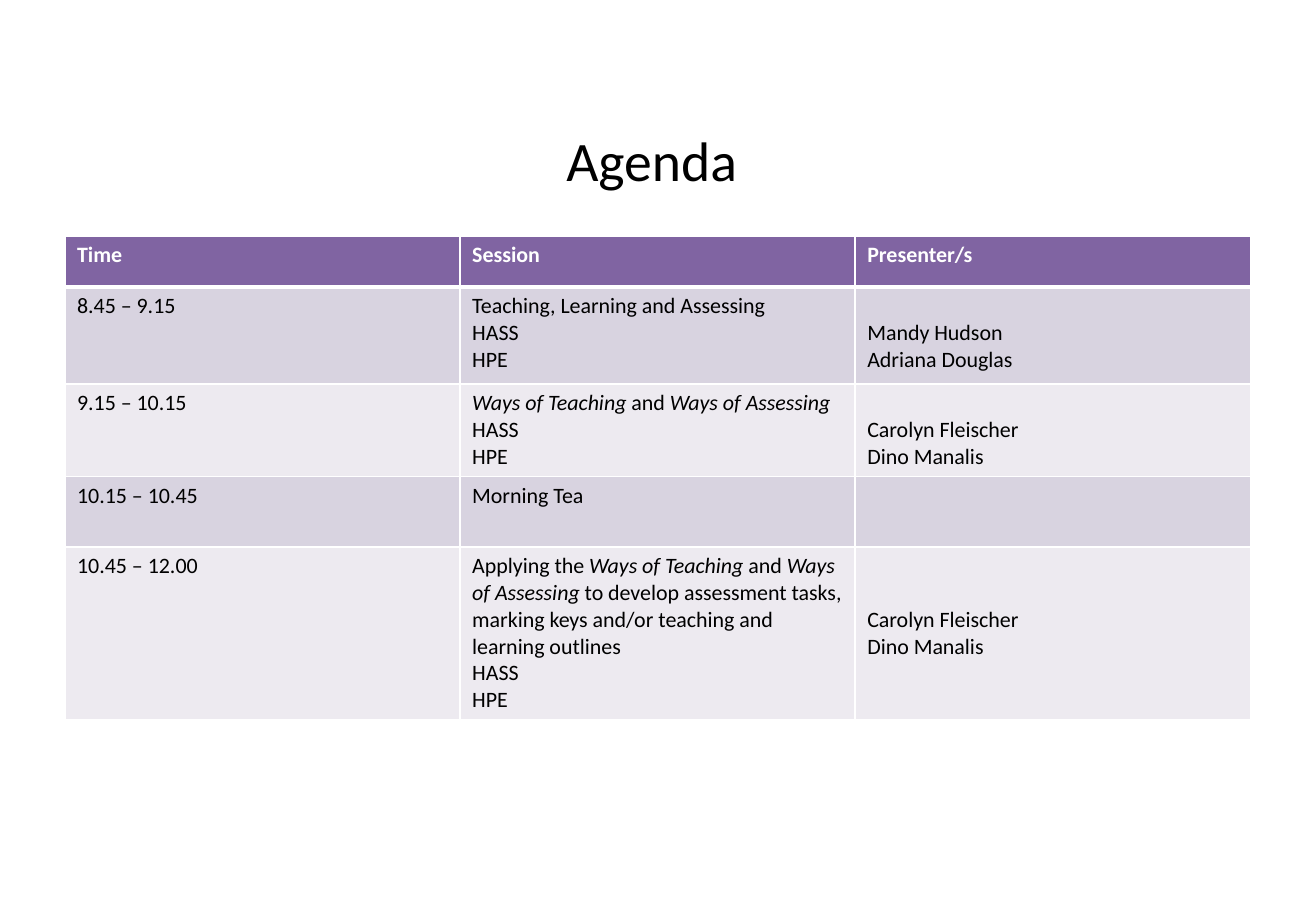
from lxml.etree import SubElement
from pptx import Presentation
from pptx.dml.color import RGBColor
from pptx.enum.text import MSO_ANCHOR, PP_ALIGN
from pptx.oxml.ns import qn
from pptx.util import Pt

WHITE, BLACK, PURPLE = "FFFFFF", "000000", "8064A2"
BANDS = ("D8D3E0", "EDEAF0")
LINE_PITCH = 15.87  # one line of 13 pt text
ROW_HEIGHTS = (30.24, 57.6, 54.81, 41.76, 102.42)

# Asterisks enclose italic words
HEADINGS = ("Time", "Session", "Presenter/s")
SESSIONS = (
    ("8.45 – 9.15", ("Teaching, Learning and Assessing", "HASS", "HPE"),
     ("Mandy Hudson", "Adriana Douglas"), 1),
    ("9.15 – 10.15", ("*Ways of Teaching *and *Ways of Assessing*", "HASS", "HPE"),
     ("Carolyn Fleischer", "Dino Manalis"), 1),
    ("10.15 – 10.45", ("Morning Tea",), (), 0),
    ("10.45 – 12.00",
     ("Applying the *Ways of Teaching *and *Ways of Assessing *to develop "
      "assessment tasks, marking keys and/or teaching and learning outlines",
      "HASS", "HPE"),
     ("Carolyn Fleischer", "Dino Manalis"), 2),
)


def colour(value):
    return RGBColor.from_string(value)


def set_format(target, values):
    for name, value in values.items():
        setattr(target, name, value)


def write_lines(text_frame, lines, size, text_colour, bold=False, align=PP_ALIGN.LEFT):
    for index, line in enumerate(lines):
        paragraph = text_frame.paragraphs[0] if index == 0 else text_frame.add_paragraph()
        paragraph.alignment = align
        for part, words in enumerate(line.split("*")):
            if words:
                run = paragraph.add_run()
                run.text = words
                set_format(run.font, {"name": "Calibri", "size": Pt(size),
                                      "bold": bold, "italic": part % 2 == 1})
                run.font.color.rgb = colour(text_colour)


def add_borders(cell, top, bottom):
    properties = cell._tc.get_or_add_tcPr()
    for side, width in (("lnL", 1), ("lnR", 1), ("lnT", top), ("lnB", bottom)):
        line = SubElement(properties, qn(f"a:{side}"), w=str(Pt(width)))
        fill = SubElement(line, qn("a:solidFill"))
        SubElement(fill, qn("a:srgbClr"), val=WHITE)


def fill_cell(cell, lines, fill, text_colour=BLACK, bold=False, top=1, bottom=1, skipped=0):
    add_borders(cell, top, bottom)
    cell.fill.solid()
    cell.fill.fore_color.rgb = colour(fill)
    set_format(cell, {"margin_left": Pt(7.2), "margin_right": Pt(7.2),
                      "margin_top": Pt(3.6 + skipped * LINE_PITCH),
                      "margin_bottom": Pt(3.6)})
    write_lines(cell.text_frame, lines, 13, text_colour, bold)


def add_title(slide, left, top, width, height):
    shape = slide.shapes.add_textbox(Pt(left), Pt(top), Pt(width), Pt(height))
    set_format(shape.text_frame, {"word_wrap": True, "vertical_anchor": MSO_ANCHOR.MIDDLE})
    write_lines(shape.text_frame, ["Agenda "], 33, BLACK, align=PP_ALIGN.CENTER)


def add_agenda(slide, left, top, width):
    table = slide.shapes.add_table(
        len(ROW_HEIGHTS), len(HEADINGS), Pt(left), Pt(top),
        Pt(width), Pt(sum(ROW_HEIGHTS))).table
    table.horz_banding = False
    for column in table.columns:
        column.width = Pt(width / len(HEADINGS))
    for row, height in zip(table.rows, ROW_HEIGHTS):
        row.height = Pt(height)

    # Header row
    for column, heading in enumerate(HEADINGS):
        fill_cell(table.cell(0, column), [heading], PURPLE, WHITE, bold=True, bottom=3)

    # Sessions; presenters sit beside their subjects
    for row, (time, session, presenters, skipped) in enumerate(SESSIONS, 1):
        band = BANDS[(row - 1) % 2]
        edge = 3 if row == 1 else 1
        fill_cell(table.cell(row, 0), [time], band, top=edge)
        fill_cell(table.cell(row, 1), session, band, top=edge)
        fill_cell(table.cell(row, 2), presenters, band, top=edge, skipped=skipped)


def main():
    presentation = Presentation()
    set_format(presentation, {"slide_width": Pt(780), "slide_height": Pt(540)})
    slide = presentation.slides.add_slide(presentation.slide_layouts[6])
    add_title(slide, 39, 60.5, 702, 67.5)
    add_agenda(slide, 38.5, 139.8, 702.6)
    presentation.save("out.pptx")


if __name__ == "__main__":
    main()
